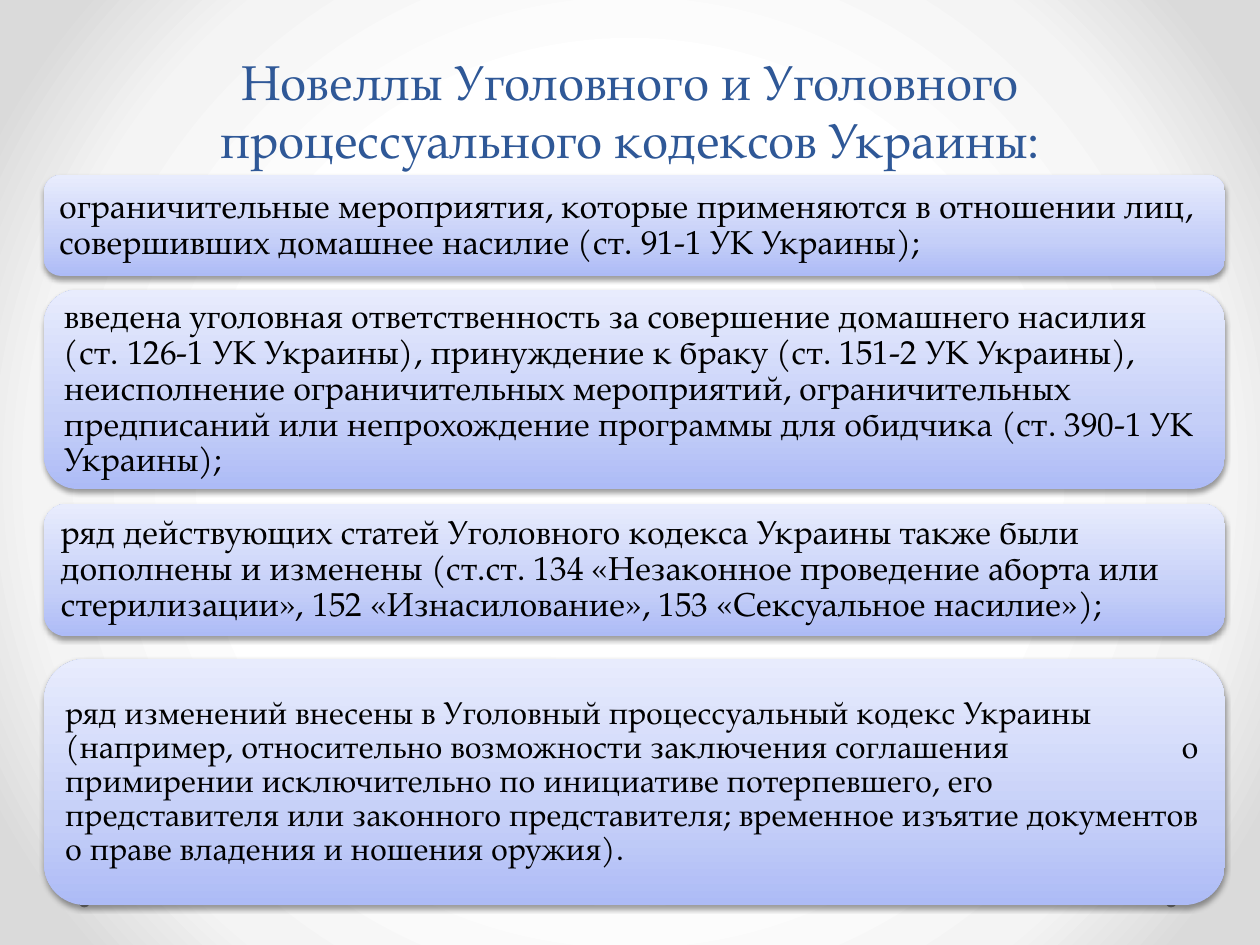
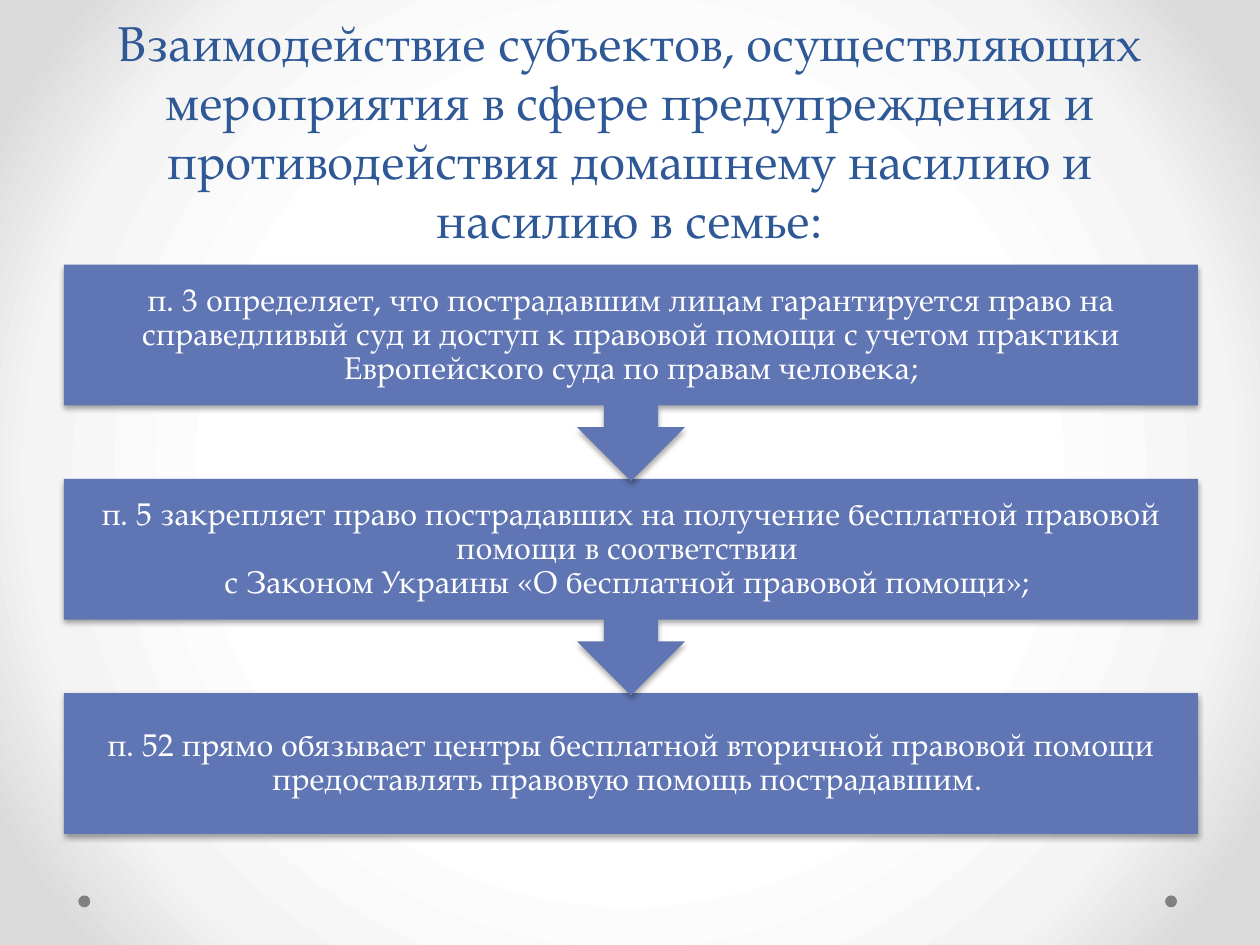
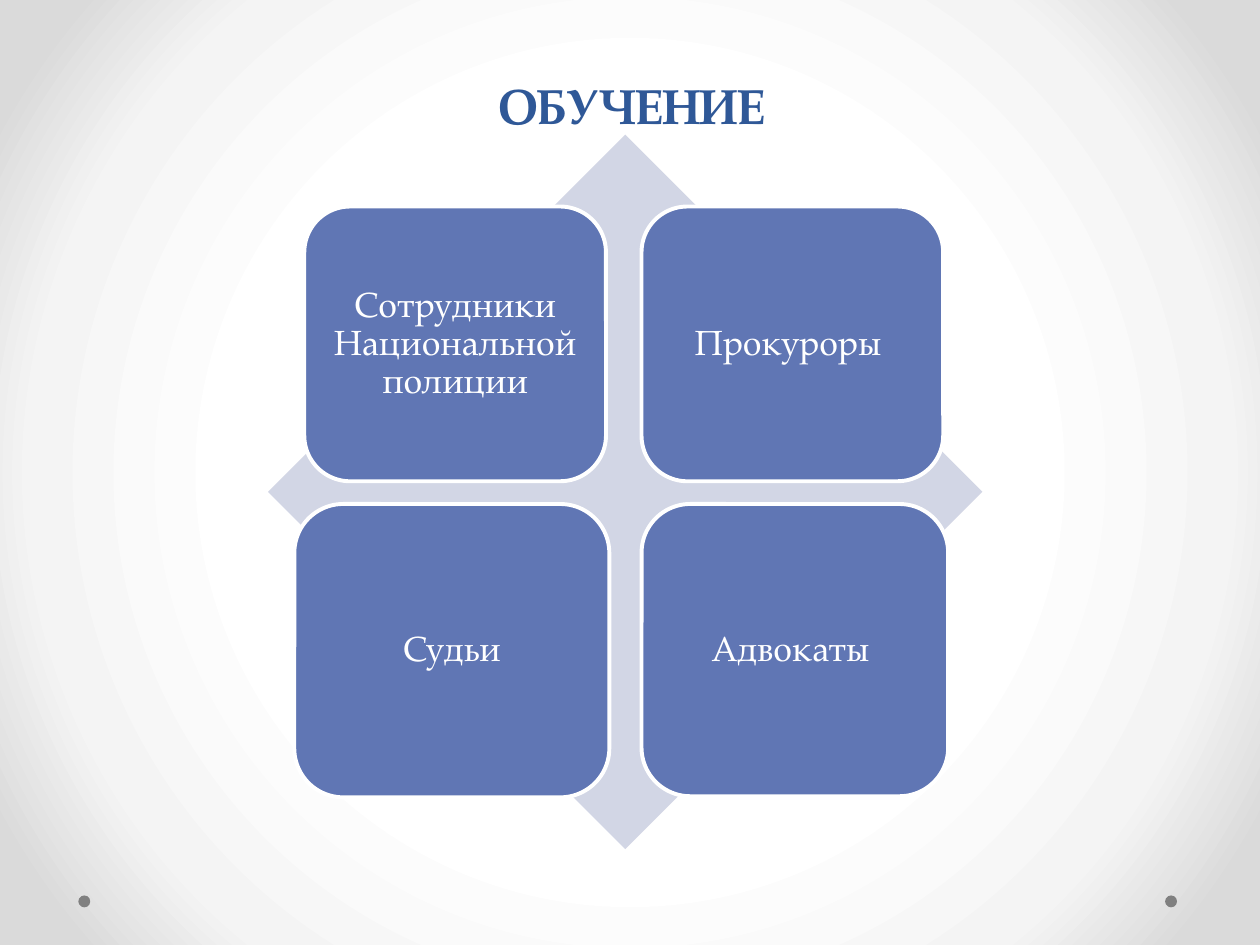
import dataclasses

import pptx
import pptx.dml.color
import pptx.enum.shapes
import pptx.enum.text
import pptx.oxml
import pptx.oxml.ns
import pptx.util

Pt = pptx.util.Pt
qn = pptx.oxml.ns.qn
SHAPES = pptx.enum.shapes.MSO_SHAPE
ALIGN = pptx.enum.text.PP_ALIGN
ANCHOR = pptx.enum.text.MSO_ANCHOR
NAMESPACE = pptx.oxml.ns.nsdecls("a")
TITLE_ONLY = 5


@dataclasses.dataclass(frozen=True)
class Theme:
    font: str = "TeX Gyre Pagella"
    title: str = "2F5897"
    accent: str = "6076B4"
    pale: str = "D2D6E5"
    dot: str = "808080"
    dark: str = "000000"
    light: str = "FFFFFF"
    backdrop: tuple = ((50, "FFFFFF"), (76, "F4F4F4"), (92, "DADADA"))
    bar: tuple = ((0, "ADBBF6"), (35, "C5CFF8"), (100, "E8ECFD"))
    title_size: float = 28
    bar_size: float = 19
    body_size: float = 18
    tile_size: float = 20


def rgb(value):
    return pptx.dml.color.RGBColor.from_string(value)


def set_gradient(fill, element, stops, direction):
    fill.gradient()
    gradient = next(element.iter(qn("a:gradFill")))
    stop_xml = "".join(
        f'<a:gs pos="{position * 1000}"><a:srgbClr val="{color}"/></a:gs>'
        for position, color in stops
    )
    gradient.getparent().replace(gradient, pptx.oxml.parse_xml(
        f'<a:gradFill {NAMESPACE} rotWithShape="1">'
        f"<a:gsLst>{stop_xml}</a:gsLst>{direction}</a:gradFill>"
    ))


class Deck:
    def __init__(self, theme):
        self.theme = theme
        self.presentation = pptx.Presentation()
        self.presentation.slide_width = Pt(720)
        self.presentation.slide_height = Pt(540)
        self.slide = None

    def add_slide(self):
        layout = self.presentation.slide_layouts[TITLE_ONLY]
        self.slide = self.presentation.slides.add_slide(layout)

    def decorate_master(self):
        master = self.presentation.slide_master
        set_gradient(
            master.background.fill, master.element, self.theme.backdrop,
            '<a:path path="circle"><a:fillToRect l="50000" t="50000" '
            'r="50000" b="50000"/></a:path>',
        )
        for index, left in enumerate((44.8, 665.8)):
            dot = self.add_shape(SHAPES.OVAL, (left, 511.7, 6.8, 6.8), self.theme.dot)
            dot.element.nvSpPr.cNvPr.id = 100 + index
            master.shapes.element.append(dot.element)

    def add_shape(self, kind, box, fill, outline=None, shadow=None):
        shape = self.slide.shapes.add_shape(kind, *map(Pt, box))
        shape.shadow.inherit = False
        if isinstance(fill, tuple):
            set_gradient(shape.fill, shape.element, fill, '<a:lin ang="16200000" scaled="0"/>')
        else:
            shape.fill.solid()
            shape.fill.fore_color.rgb = rgb(fill)
        if outline:
            shape.line.color.rgb = rgb(outline)
            shape.line.width = Pt(2.25)
        else:
            shape.line.fill.background()
        if shadow:
            opacity, distance = shadow
            shape.element.spPr.find(qn("a:effectLst")).append(pptx.oxml.parse_xml(
                f'<a:outerShdw {NAMESPACE} blurRad="{Pt(3.1)}" dist="{Pt(distance)}" '
                f'dir="5400000" rotWithShape="0"><a:srgbClr val="{self.theme.dark}">'
                f'<a:alpha val="{opacity * 1000}"/></a:srgbClr></a:outerShdw>'
            ))
        return shape

    def set_text(self, shape, text, size, color, align, spacing, bold=False):
        frame = shape.text_frame
        frame.word_wrap = True
        frame.auto_size = pptx.enum.text.MSO_AUTO_SIZE.NONE
        frame.text = text
        for paragraph in frame.paragraphs:
            paragraph.alignment = align
            paragraph.line_spacing = spacing
            for run in paragraph.runs:
                run.font.name = self.theme.font
                run.font.size = Pt(size)
                run.font.color.rgb = rgb(color)
                run.font.bold = bold

    def add_title(self, text, box, spacing=1.0, bold=False):
        title = self.slide.shapes.title
        title.left, title.top, title.width, title.height = map(Pt, box)
        title.text_frame.vertical_anchor = ANCHOR.BOTTOM
        self.set_text(title, text, self.theme.title_size, self.theme.title,
                      ALIGN.CENTER, spacing, bold)

    def label(self, shape, text, size, color, inset, align=ALIGN.CENTER):
        frame = shape.text_frame
        frame.vertical_anchor = ANCHOR.MIDDLE
        frame.margin_left = frame.margin_right = Pt(inset)
        frame.margin_top = frame.margin_bottom = Pt(inset)
        self.set_text(shape, text, size, color, align, 0.9)

    def add_bar(self, text, top, height, size, inset):
        bar = self.add_shape(SHAPES.ROUNDED_RECTANGLE, (25.2, top, 674.8, height),
                             self.theme.bar, shadow=(38, 1.6))
        self.label(bar, text, size, self.theme.dark, inset, ALIGN.LEFT)
        return bar

    def add_tab_stop(self, shape, position):
        for properties in shape.element.iter(qn("a:pPr")):
            properties.append(pptx.oxml.parse_xml(
                f'<a:tabLst {NAMESPACE}><a:tab pos="{Pt(position)}" algn="l"/></a:tabLst>'
            ))

    def add_step(self, text, kind, top, height):
        step = self.add_shape(kind, (36.6, top, 648, height),
                              self.theme.accent, shadow=(35, 1.8))
        self.label(step, text, self.theme.body_size, self.theme.light, 10)

    def add_tile(self, text, box):
        tile = self.add_shape(SHAPES.ROUNDED_RECTANGLE, box,
                              self.theme.accent, self.theme.light)
        self.label(tile, text, self.theme.tile_size, self.theme.light, 6)


def build_novelties(deck):
    deck.add_title("Новеллы Уголовного и Уголовного процессуального кодексов Украины:",
                   (36, 20.9, 648, 79.2))
    bars = (
        ("ограничительные мероприятия, которые применяются в отношении лиц, "
         "совершивших домашнее насилие (ст. 91-1 УК Украины);", 100.1, 57.6),
        ("введена уголовная ответственность за совершение домашнего насилия "
         "(ст. 126-1 УК Украины), принуждение к браку (ст. 151-2 УК Украины), "
         "неисполнение ограничительных мероприятий, ограничительных предписаний "
         "или непрохождение программы для обидчика (ст. 390-1 УК Украины);", 165.6, 113.8),
        ("ряд действующих статей Уголовного кодекса Украины также были дополнены "
         "и изменены (ст.ст. 134 «Незаконное проведение аборта или стерилизации», "
         "152 «Изнасилование», 153 «Сексуальное насилие»);", 288, 75.6),
    )
    for text, top, height in bars:
        deck.add_bar(text, top, height, deck.theme.bar_size, 5.8)
    procedure = deck.add_bar(
        "ряд изменений внесены в Уголовный процессуальный кодекс Украины "
        "(например, относительно возможности заключения соглашения\tо примирении "
        "исключительно по инициативе потерпевшего, его представителя или законного "
        "представителя; временное изъятие документов о праве владения и ношения оружия).",
        376.6, 140.6, deck.theme.body_size, 5.2)
    deck.add_tab_stop(procedure, 638)


def build_cooperation(deck):
    deck.add_title("Взаимодействие субъектов, осуществляющих мероприятия в сфере "
                   "предупреждения и противодействия домашнему насилию и насилию в семье:",
                   (36, 0, 648, 145.4))
    steps = (
        "п. 3 определяет, что пострадавшим лицам гарантируется право на справедливый суд "
        "и доступ к правовой помощи с учетом практики Европейского суда по правам человека;",
        "п. 5 закрепляет право пострадавших на получение бесплатной правовой помощи "
        "в соответствии \nс Законом Украины «О бесплатной правовой помощи»; ",
        "п. 52 прямо обязывает центры бесплатной вторичной правовой помощи "
        "предоставлять правовую помощь пострадавшим. ",
    )
    last = len(steps) - 1
    for index in reversed(range(len(steps))):
        kind, height = ((SHAPES.RECTANGLE, 80.6) if index == last
                        else (SHAPES.DOWN_ARROW_CALLOUT, 123.8))
        deck.add_step(steps[index], kind, 151.2 + 122.4 * index, height)


def build_training(deck):
    deck.add_title("ОБУЧЕНИЕ", (36.7, 15.1, 648, 65.5), Pt(58), bold=True)
    deck.add_shape(SHAPES.DIAMOND, (153.2, 77, 408.2, 408.2), deck.theme.pale)
    tiles = (
        ("Сотрудники Национальной полиции", (173.9, 118, 172.4, 157)),
        ("Прокуроры ", (366.6, 118, 172.4, 157)),
        ("Судьи", (168.2, 288, 180, 167.6)),
        ("Адвокаты ", (366.6, 288, 175.2, 167)),
    )
    for text, box in tiles:
        deck.add_tile(text, box)


def main():
    deck = Deck(Theme())
    for index, build in enumerate((build_novelties, build_cooperation, build_training)):
        deck.add_slide()
        if index == 0:
            deck.decorate_master()
        build(deck)
    deck.presentation.save("out.pptx")


if __name__ == "__main__":
    main()
